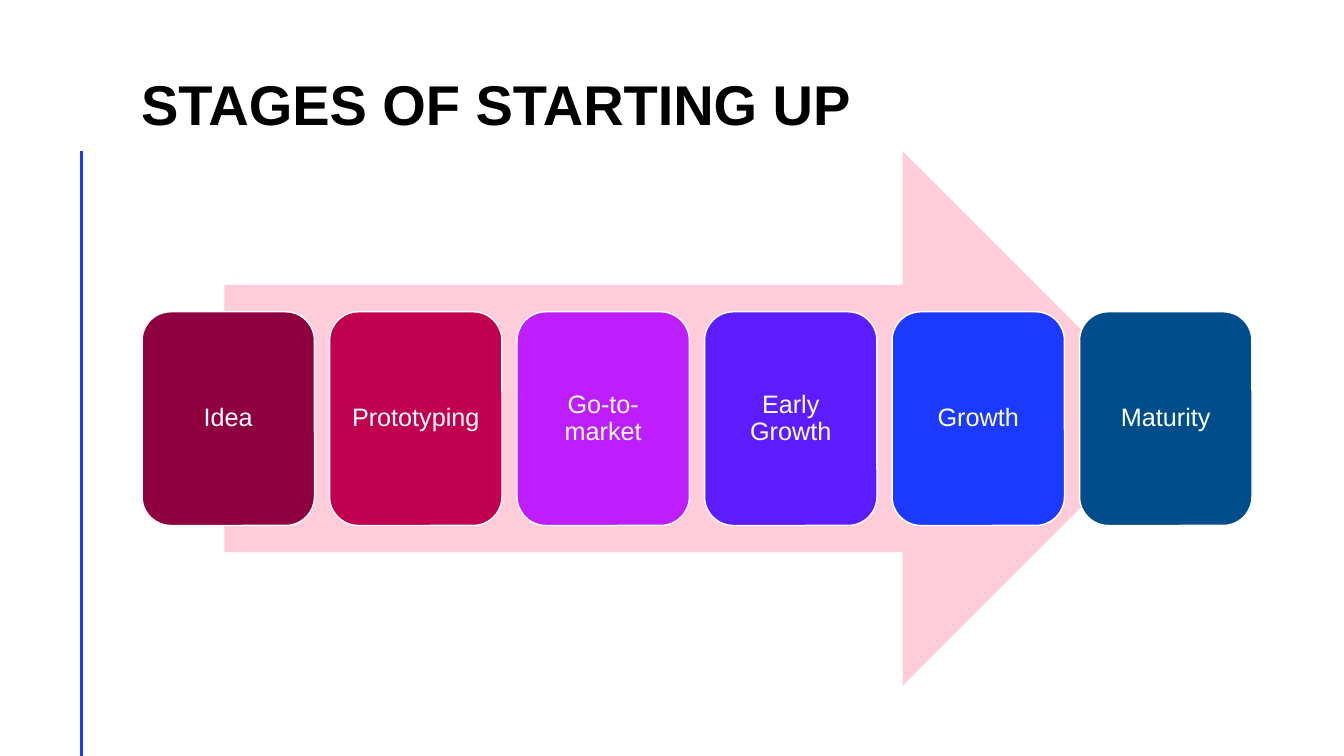
from lxml.etree import SubElement
from pptx import Presentation
from pptx.dml.color import RGBColor
from pptx.enum.shapes import MSO_CONNECTOR as Connector, MSO_SHAPE as Shape
from pptx.enum.text import MSO_ANCHOR as Anchor, MSO_AUTO_SIZE as AutoSize, PP_ALIGN as Align
from pptx.oxml.ns import qn
from pptx.util import Pt

BLACK = RGBColor(0x00, 0x00, 0x00)
WHITE = RGBColor(0xFF, 0xFF, 0xFF)
PINK = RGBColor(0xFF, 0xCD, 0xD9)
BLUE = RGBColor(0x1B, 0x39, 0xFF)
STAGES = [
    ("Idea", RGBColor(0x8F, 0x00, 0x41)),
    ("Prototyping", RGBColor(0xC1, 0x00, 0x4F)),
    ("Go-to-market", RGBColor(0xBD, 0x1D, 0xFF)),
    ("Early Growth", RGBColor(0x5D, 0x1C, 0xFF)),
    ("Growth", BLUE),
    ("Maturity", RGBColor(0x00, 0x4D, 0x8C)),
]


def apply_format(target, values):
    for name, value in values.items():
        setattr(target, name, value)


def write_text(shape, text, margin, anchor, paragraph_format, font_format, color):
    frame = shape.text_frame
    frame.text = text
    apply_format(frame, {
        "margin_left": margin, "margin_right": margin,
        "margin_top": margin, "margin_bottom": margin,
        "word_wrap": True, "auto_size": AutoSize.NONE, "vertical_anchor": anchor,
    })
    paragraph = frame.paragraphs[0]
    apply_format(paragraph, paragraph_format)
    font = paragraph.runs[0].font
    apply_format(font, {"name": "Arial", **font_format})
    font.color.rgb = color


def add_block(slide, kind, left, top, width, height, color):
    shape = slide.shapes.add_shape(kind, left, top, width, height)
    shape.shadow.inherit = False
    shape.fill.solid()
    shape.fill.fore_color.rgb = color
    shape.line.fill.background()
    return shape


def add_title(slide, left, top, width, height):
    title = slide.shapes.title
    apply_format(title, {"left": left, "top": top, "width": width, "height": height})
    write_text(title, "STAGES OF STARTING UP", 0, Anchor.BOTTOM,
               {"alignment": Align.LEFT, "line_spacing": Pt(40)},
               {"size": Pt(40), "bold": True}, BLACK)


def add_side_rule(slide, left, top, height):
    rule = slide.shapes.add_connector(Connector.STRAIGHT, left, top, left, top + height)
    rule.line.color.rgb = BLUE
    rule.line.width = Pt(2)
    SubElement(rule._element.spPr, qn("a:effectLst"))


def add_stages(slide, left, top, width, height):
    arrow_width = Pt(675.4)
    add_block(slide, Shape.RIGHT_ARROW, left + (width - arrow_width) // 2, top,
              arrow_width, height, PINK)
    gap = Pt(10.8)
    card_width = (width - gap * (len(STAGES) - 1)) // len(STAGES)
    card_height = int(height * 0.4)
    card_top = top + (height - card_height) // 2
    for index, (label, color) in enumerate(STAGES):
        card = add_block(slide, Shape.ROUNDED_RECTANGLE, left + index * (card_width + gap),
                         card_top, card_width, card_height, color)
        card.line.color.rgb = WHITE
        card.line.width = Pt(1)
        write_text(card, label, Pt(5.4), Anchor.MIDDLE,
                   {"alignment": Align.CENTER, "line_spacing": 0.9},
                   {"size": Pt(18)}, WHITE)


def main():
    presentation = Presentation()
    apply_format(presentation, {"slide_width": Pt(960), "slide_height": Pt(540)})
    slide = presentation.slides.add_slide(presentation.slide_layouts[5])
    add_side_rule(slide, Pt(58.3), Pt(108), Pt(432))
    add_title(slide, Pt(100.8), Pt(-2.9), Pt(779), Pt(100.8))
    add_stages(slide, Pt(101.5), Pt(108.2), Pt(792.8), Pt(381.6))
    presentation.save("out.pptx")


if __name__ == "__main__":
    main()
